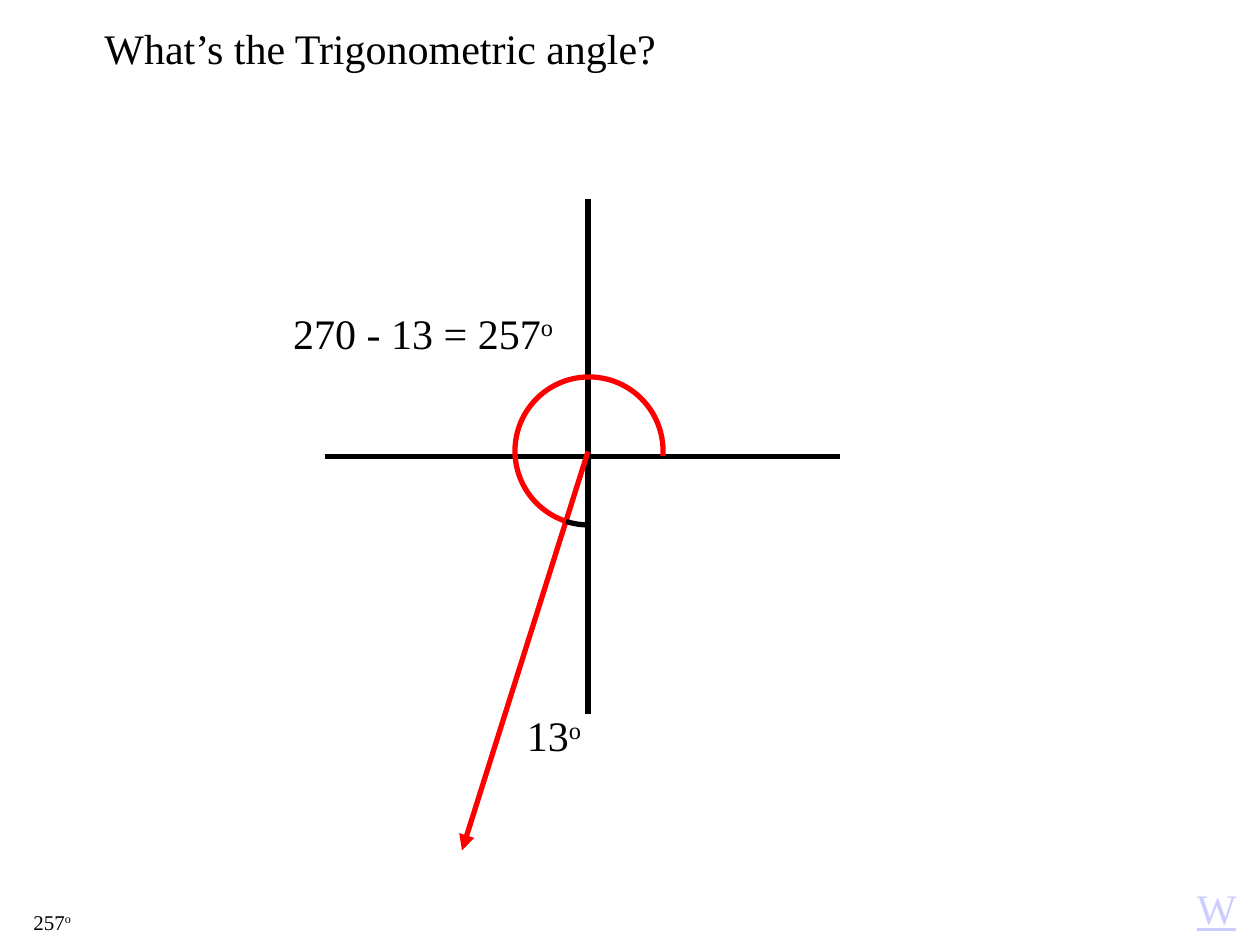
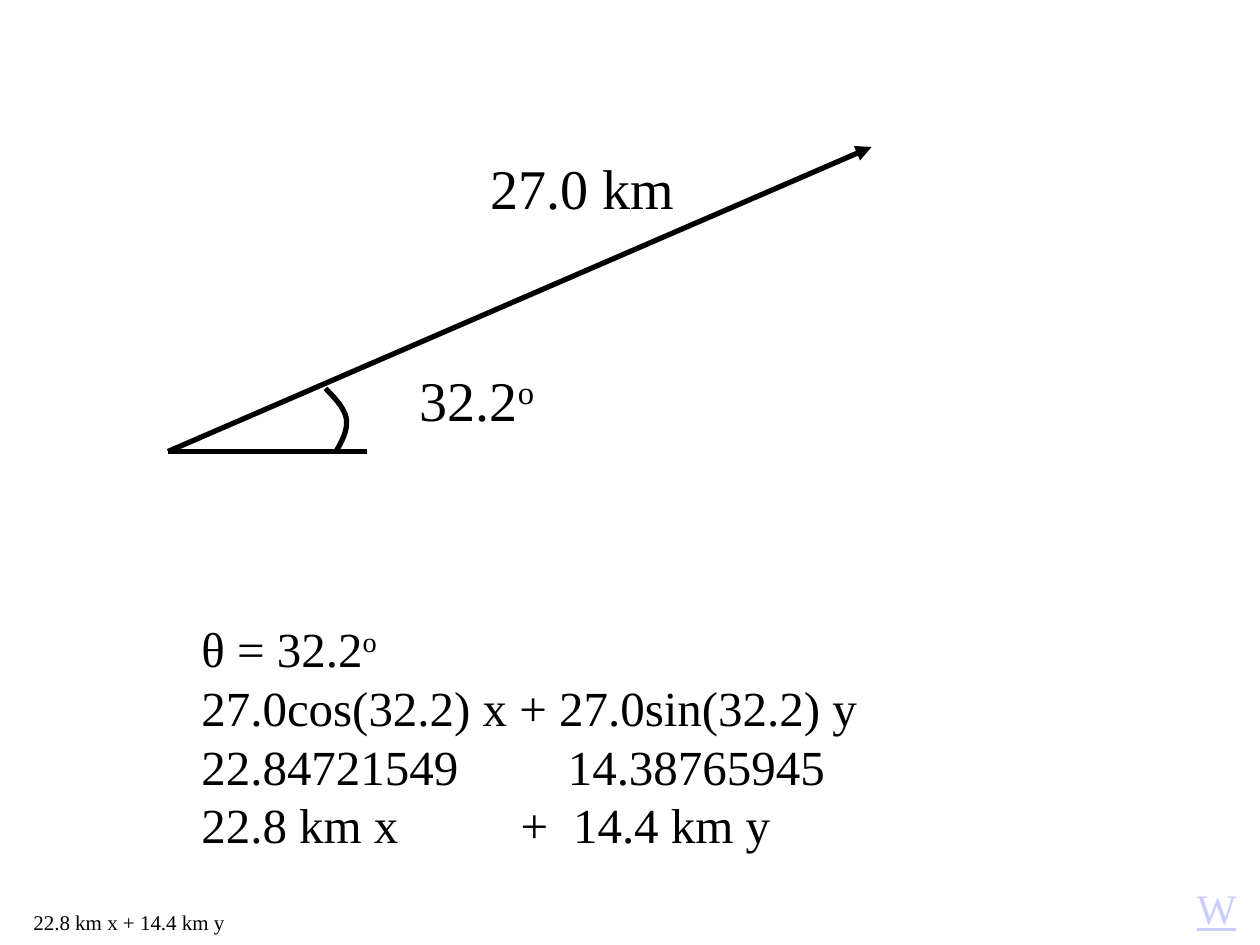
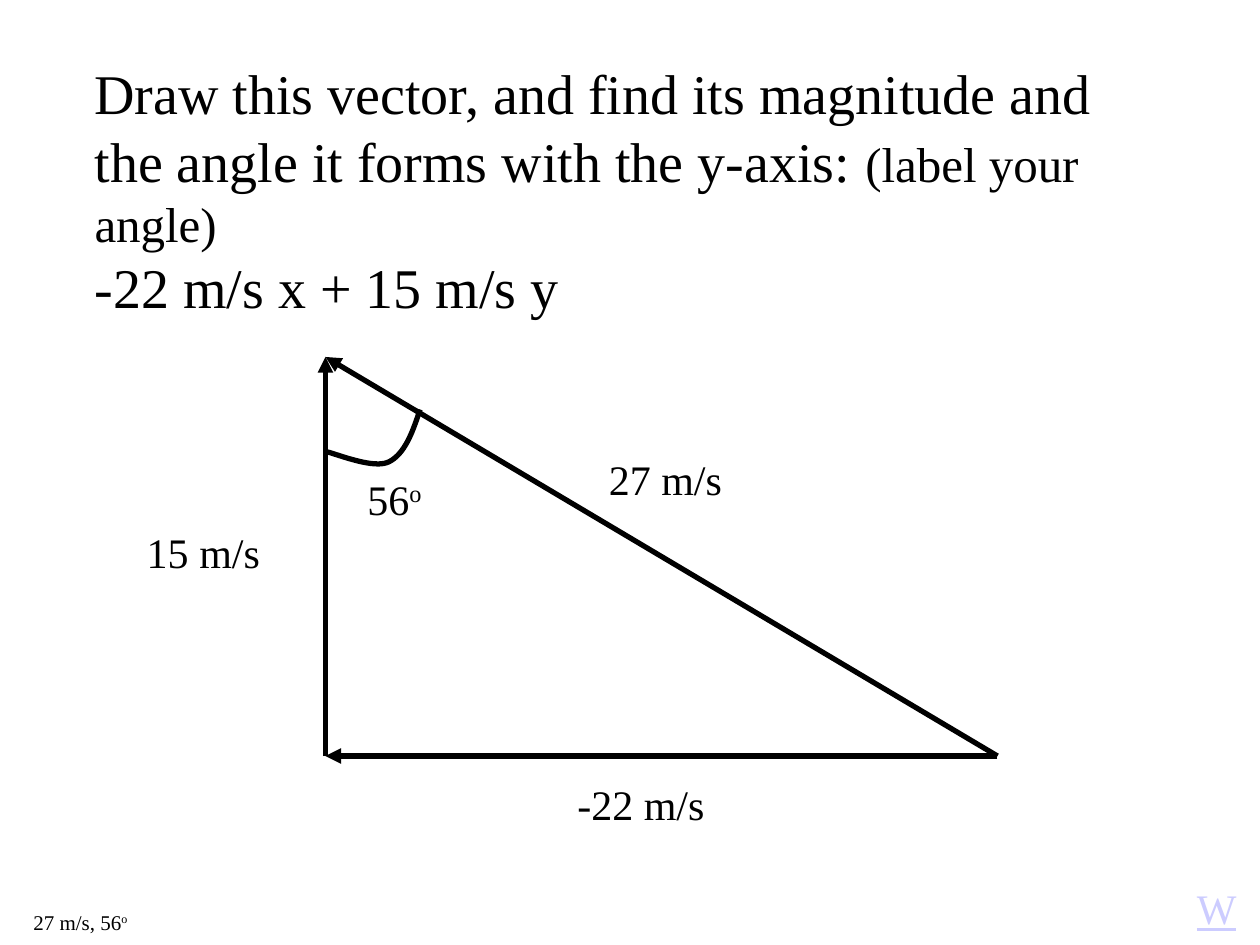
from dataclasses import dataclass

from lxml import etree
from pptx import Presentation
from pptx import util as u
from pptx.dml.color import RGBColor
from pptx.enum import shapes, text
from pptx.oxml import ns

BLACK = RGBColor(0x00, 0x00, 0x00)
RED = RGBColor(0xFF, 0x00, 0x00)
LAVENDER = RGBColor(0xCC, 0xCC, 0xFF)
FONT = "Times New Roman"
STROKE = u.Pt(3)
COLUMNS = 120
WIDTH, HEIGHT = u.Inches(10), u.Inches(7.5)
CELL = WIDTH // COLUMNS
CURVE_STEPS = 24
TITLE_ONLY, BLANK = 5, 6

Point = tuple[float, float]


@dataclass(frozen=True)
class Run:
    text: str
    size: int | None = None
    raised: bool = False


DEGREE = Run("o", raised=True)


@dataclass(frozen=True)
class Line:
    runs: tuple[Run, ...]
    tabs: tuple[float, ...] = ()


@dataclass(frozen=True)
class Label:
    lines: tuple[Line, ...]
    column: float
    row: float
    width: float
    height: float
    size: int = 24
    color: RGBColor = BLACK
    underline: bool = False
    wrap: bool = False


@dataclass(frozen=True)
class Vector:
    start: Point
    end: Point
    color: RGBColor = BLACK
    arrow: bool = True


@dataclass(frozen=True)
class AngleArc:
    start: float
    end: float
    color: RGBColor


def label(runs: str | tuple[Run, ...], column: float, row: float,
          width: float, height: float = 6, **style) -> Label:
    runs = (Run(runs),) if isinstance(runs, str) else runs
    return Label((Line(runs),), column, row, width, height, **style)


def cells(*counts: float) -> list[int]:
    return [round(count * CELL) for count in counts]


def write(shape, content: Label) -> None:
    shape.left, shape.top, shape.width, shape.height = cells(
        content.column, content.row, content.width, content.height)
    frame = shape.text_frame
    frame.word_wrap = content.wrap
    frame.auto_size = text.MSO_AUTO_SIZE.SHAPE_TO_FIT_TEXT
    frame.vertical_anchor = text.MSO_ANCHOR.TOP
    for index, line in enumerate(content.lines):
        paragraph = frame.add_paragraph() if index else frame.paragraphs[0]
        paragraph.alignment = text.PP_ALIGN.LEFT
        if line.tabs:
            tab_list = etree.SubElement(paragraph._p.get_or_add_pPr(), ns.qn("a:tabLst"))
            for stop in cells(*line.tabs):
                etree.SubElement(tab_list, ns.qn("a:tab"), pos=str(stop), algn="l")
        font = paragraph.font
        font.name, font.size = FONT, u.Pt(content.size)
        font.color.rgb = content.color
        font.underline = content.underline
        for piece in line.runs:
            run = paragraph.add_run()
            run.text = piece.text
            if piece.size:
                run.font.size = u.Pt(piece.size)
            if piece.raised:
                run._r.get_or_add_rPr().set("baseline", "30000")


def add_label(slide, content: Label) -> None:
    write(slide.shapes.add_textbox(0, 0, 0, 0), content)


def draw_vector(slide, vector: Vector) -> None:
    connector = slide.shapes.add_connector(
        shapes.MSO_CONNECTOR.STRAIGHT, *cells(*vector.start, *vector.end))
    connector.line.color.rgb = vector.color
    connector.line.width = STROKE
    if vector.arrow:
        etree.SubElement(connector.line._get_or_add_ln(), ns.qn("a:tailEnd"), type="triangle")
    etree.SubElement(connector._element.spPr, ns.qn("a:effectLst"))


def outline(shape, color: RGBColor) -> None:
    shape.shadow.inherit = False
    shape.fill.background()
    shape.line.color.rgb = color
    shape.line.width = STROKE


def draw_arc(slide, arc: AngleArc, center: Point, radius: float) -> None:
    column, row = center
    shape = slide.shapes.add_shape(
        shapes.MSO_SHAPE.ARC,
        *cells(column - radius, row - radius, 2 * radius, 2 * radius))
    for index, degrees in enumerate((arc.start, arc.end)):
        shape.adjustments[index] = degrees * 0.6
    outline(shape, arc.color)


def bezier(a: Point, b: Point, c: Point, d: Point) -> list[Point]:
    def at(t: float) -> Point:
        weights = ((1 - t) ** 3, 3 * t * (1 - t) ** 2, 3 * t ** 2 * (1 - t), t ** 3)
        column, row = (sum(w * p[axis] for w, p in zip(weights, (a, b, c, d)))
                       for axis in (0, 1))
        return column, row
    return [at(step / CURVE_STEPS) for step in range(CURVE_STEPS + 1)]


def draw_curve(slide, first: tuple[Point, ...], second: tuple[Point, ...]) -> None:
    points = bezier(*first) + bezier(first[-1], *second)[1:]
    builder = slide.shapes.build_freeform(*cells(*points[0]))
    builder.add_line_segments([cells(*point) for point in points[1:]], close=False)
    outline(builder.convert_to_shape(), BLACK)


def add_slide(presentation, answer: Label, title: Label | None = None):
    layout = presentation.slide_layouts[TITLE_ONLY if title else BLANK]
    slide = presentation.slides.add_slide(layout)
    if title:
        write(slide.shapes.title, title)
    add_label(slide, answer)
    add_label(slide, label("W", 112.8, 83.5, 6.2, color=LAVENDER, underline=True))
    return slide


def answer_label(*runs: Run, width: float) -> Label:
    return label(runs, 2, 86, width, 3.6, size=12)


def build_trigonometric_angle(presentation) -> None:
    slide = add_slide(
        presentation,
        answer_label(Run("257"), DEGREE, width=6.1),
        label("What’s the Trigonometric angle?", 8.75, 1.5, 55.3))
    for vector in (
        Vector((31, 43.5), (80, 43.5), arrow=False),
        Vector((56, 19), (56, 68), arrow=False),
        Vector((56, 43), (44, 81), RED),
    ):
        draw_vector(slide, vector)
    add_label(slide, label((Run("13"), DEGREE), 49, 67, 7.8))
    add_label(slide, label((Run("270 - 13 = 257"), DEGREE), 26.75, 28.7, 27.4))
    for arc in (AngleArc(109, 4, RED), AngleArc(90, 108, BLACK)):
        draw_arc(slide, arc, (56.1, 42.95), 7.05)


def build_components(presentation) -> None:
    slide = add_slide(presentation, answer_label(Run("22.8 km x + 14.4 km y"), width=20.6))
    draw_vector(slide, Vector((16, 43), (83, 14)))
    draw_vector(slide, Vector((16, 43), (35, 43), arrow=False))
    draw_curve(slide, ((31, 37), (32, 38), (32.9, 39), (33, 40)),
               ((33.1, 41), (32.6, 42), (32, 43)))
    add_label(slide, label((Run("32.2"), DEGREE), 38.8, 34.2, 13.4, 7.6, size=32))
    add_label(slide, label("27.0 km", 45.5, 14, 19.9, 7.6, size=32))
    add_label(slide, Label((
        Line((Run("θ = 32.2"), DEGREE)),
        Line((Run("27.0cos(32.2) x + 27.0sin(32.2) y"),)),
        Line((Run("22.84721549\t14.38765945"),), (34.9,)),
        Line((Run("22.8 km x\t+\t14.4 km y"),), (30.4, 35.4)),
    ), 18, 58.3, 64.9, 23.6, size=28))


def build_magnitude(presentation) -> None:
    question = Label((
        Line((Run("Draw this vector, and find its magnitude and the angle "
                  "it forms with the y-axis: "),
              Run("(label your angle)", size=28))),
        Line((Run("-22 m/s x + 15 m/s y"),)),
    ), 7.8, 5, 105.2, 26, size=32, wrap=True)
    slide = add_slide(
        presentation, answer_label(Run("27 m/s, 56"), DEGREE, width=11.5), question)
    right, corner, top = (95, 72), (31, 72), (31, 34)
    for start, end in ((right, corner), (corner, top), (right, top)):
        draw_vector(slide, Vector(start, end))
    for side in (
        label("-22 m/s", 53.8, 73.6, 15.5),
        label("15 m/s", 12.8, 49.6, 13.2),
        label("27 m/s", 56.8, 42.6, 13.2),
        label((Run("56"), DEGREE), 33.8, 44.5, 7.8),
    ):
        add_label(slide, side)
    draw_curve(slide, ((40, 39), (39.3, 41.2), (38.5, 43.3), (37, 44)),
               ((35.5, 44.7), (32, 43.2), (31, 43)))


def main() -> None:
    presentation = Presentation()
    presentation.slide_width, presentation.slide_height = WIDTH, HEIGHT
    build_trigonometric_angle(presentation)
    build_components(presentation)
    build_magnitude(presentation)
    presentation.save("out.pptx")


if __name__ == "__main__":
    main()
